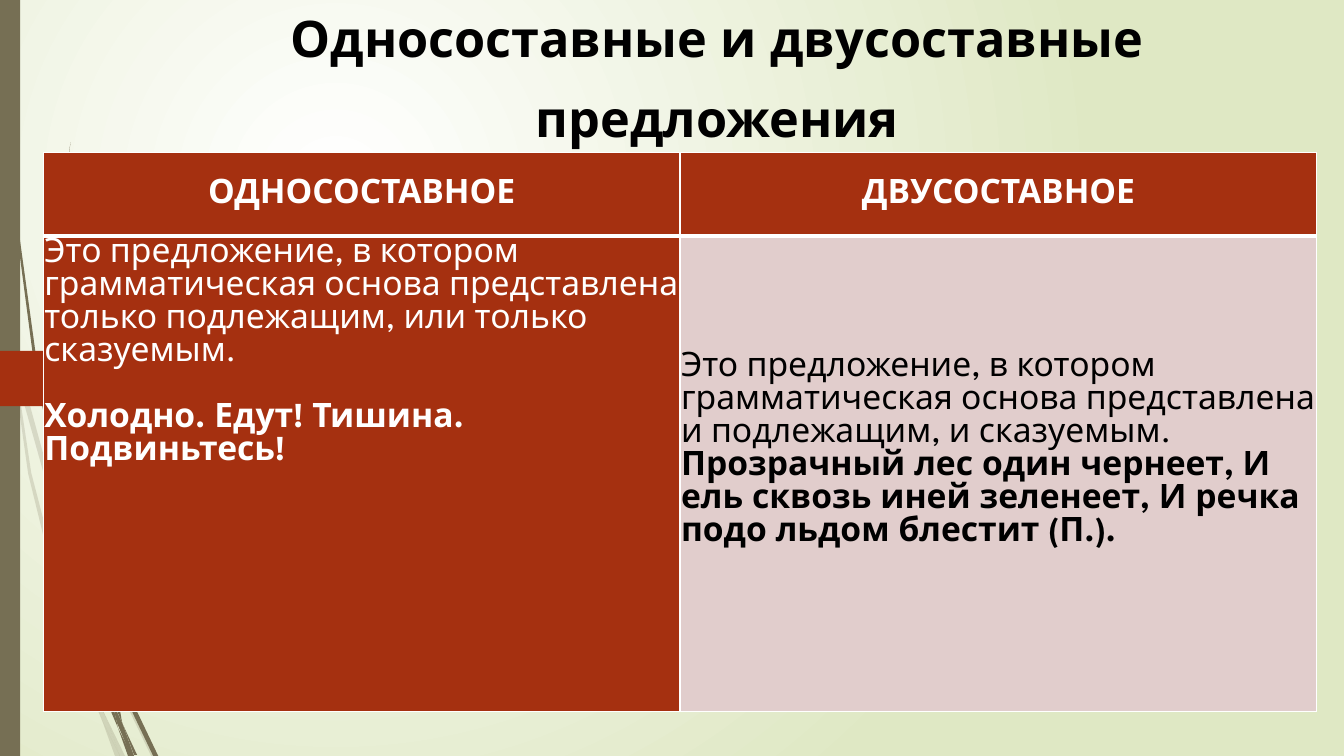
from dataclasses import dataclass

from lxml.etree import SubElement
from pptx import Presentation
from pptx.dml.color import RGBColor
from pptx.enum.shapes import MSO_SHAPE
from pptx.enum.text import MSO_ANCHOR, PP_ALIGN
from pptx.oxml.ns import qn
from pptx.util import Inches, Pt

COLORS = {"white": "FFFFFF", "black": "000000", "meadow": "DFE8C4",
          "stem": "766F54", "brick": "A53010", "blush": "E1CDCC"}
FONT = "League Spartan"
Points = list[tuple[float, float]]


@dataclass
class Line:
    text: str
    bold: bool = False
    before: float = 0


@dataclass
class Entry:
    lines: list[Line]
    fill: str
    color: str
    anchor: MSO_ANCHOR = MSO_ANCHOR.MIDDLE
    align: PP_ALIGN = PP_ALIGN.LEFT
    bottom: float = 0.01


# Grass blades: outlines in inches
PALE_BLADES: list[Points] = [
    [(0.11, 3.5), (0.09, 3.22), (0, 2.82), (0, 2.99), (0.1, 3.44)],
    [(0.58, 5.22), (0.84, 6), (0.85, 5.87), (0.62, 5.2), (0.14, 3.45), (0.17, 3.76)],
    [(0.92, 6.07), (0.88, 5.96), (0.88, 6.1), (1.23, 6.94), (1.5, 7.5), (1.55, 7.5),
     (1.27, 6.92)],
    [(1.19, 7.5), (1.24, 7.5), (1.05, 7.11)],
    [(0.93, 6.83), (0.7, 6.19), (0.31, 4.69), (0.17, 3.76), (0.11, 3.5), (0.28, 4.7),
     (0.65, 6.21), (0.92, 6.93), (1.01, 7.14), (0.99, 7.07)],
    [(0.84, 5.99), (0.87, 6.46), (0.93, 6.83), (0.96, 6.92), (1.05, 7.12), (1.03, 7.07),
     (0.91, 6.46), (0.88, 6.1), (0.88, 6.08)],
    [(0.88, 5.84), (1.1, 4.62), (1.6, 3.49), (2.29, 2.45), (2.68, 1.98), (2.9, 1.75),
     (3.12, 1.54), (3.12, 1.53), (2.89, 1.75), (2.68, 1.97), (2.28, 2.44), (1.58, 3.48),
     (1.07, 4.61), (0.85, 5.84), (0.85, 5.86), (0.88, 5.96)],
    [(1.01, 7.14), (1.14, 7.5), (1.19, 7.5)],
    [(0.88, 6.08), (0.88, 5.96), (0.85, 5.86), (0.84, 5.99)],
    [(0.96, 6.92), (0.93, 6.83), (0.99, 7.07), (1.01, 7.14), (1.19, 7.5), (1.05, 7.11)],
]
DARK_BLADES: list[Points] = [
    [(0.07, 1.1), (0.17, 2.33), (0.33, 3.55), (0.56, 4.77), (0.57, 4.81), (0.55, 4.57),
     (0.55, 4.53), (0.36, 3.55), (0.19, 2.32), (0.08, 1.09), (0.05, 0.48), (0.04, 0),
     (0.03, 0), (0.04, 0.48)],
    [(0.88, 5.92), (1.06, 6.45), (1.06, 6.31), (0.93, 5.9), (0.6, 4.72), (0.64, 5.05)],
    [(1.13, 6.49), (1.1, 6.41), (1.11, 6.56), (1.32, 7.08), (1.52, 7.5), (1.57, 7.5),
     (1.36, 7.06)],
    [(1.1, 6.91), (0.98, 6.57), (0.72, 5.56), (0.64, 5.05), (0.57, 4.77), (0.68, 5.57),
     (0.93, 6.59), (1.11, 7.08), (1.17, 7.22), (1.16, 7.17)],
    [(0.6, 4.72), (0.58, 4.53), (0.54, 3.49), (0.58, 2.45), (0.63, 1.93), (0.7, 1.41),
     (0.62, 1.93), (0.56, 2.45), (0.52, 3.49), (0.55, 4.49)],
    [(1.33, 7.49), (1.36, 7.49), (1.22, 7.19)],
    [(0.57, 4.77), (0.64, 5.05), (0.6, 4.72), (0.55, 4.49), (0.55, 4.53)],
    [(1.11, 6.33), (1.25, 5.52), (1.58, 4.76), (2.05, 4.06), (2.31, 3.74), (2.61, 3.44),
     (2.6, 3.44), (2.31, 3.73), (2.04, 4.05), (1.56, 4.74), (1.22, 5.51), (1.06, 6.31),
     (1.1, 6.41)],
    [(1.17, 7.22), (1.27, 7.5), (1.31, 7.5)],
    [(1.06, 6.45), (1.1, 6.91), (1.22, 7.19), (1.21, 7.16), (1.11, 6.56), (1.09, 6.51)],
    [(1.06, 6.45), (1.11, 6.56), (1.1, 6.41), (1.06, 6.31)],
    [(1.16, 7.06), (1.1, 6.91), (1.16, 7.17), (1.3, 7.5), (1.33, 7.5), (1.22, 7.19)],
]
PAGE_MARKER: Points = [(0, 3.48), (1.47, 3.48), (1.74, 3.76), (1.47, 4.03), (0, 4.03)]

HEADER = {"fill": "brick", "color": "white", "align": PP_ALIGN.CENTER}
ENTRIES = [
    [Entry([Line("ОДНОСОСТАВНОЕ", True)], **HEADER),
     Entry([Line("ДВУСОСТАВНОЕ", True)], **HEADER)],
    [Entry([Line("Это предложение, в котором грамматическая основа представлена "
                 "только подлежащим, или только сказуемым."),
            Line("Холодно. Едут! Тишина. Подвиньтесь!", True, 23.6)],
           "brick", "white", MSO_ANCHOR.TOP),
     Entry([Line("Это предложение, в котором грамматическая основа представлена "
                 "и подлежащим, и сказуемым."),
            Line("Прозрачный лес один чернеет, И ель сквозь иней зеленеет, "
                 "И речка подо льдом блестит (П.).", True)],
           "blush", "black", bottom=0.49)],
]


def rgb(name: str) -> RGBColor:
    return RGBColor.from_string(COLORS[name])


def paint(shape, color: str) -> None:
    shape.shadow.inherit = False
    shape.fill.solid()
    shape.fill.fore_color.rgb = rgb(color)
    shape.line.fill.background()


def draw_outline(page, points: Points, color: str, opacity: int = 100) -> None:
    corners = [(Inches(x), Inches(y)) for x, y in points]
    builder = page.shapes.build_freeform(*corners[0], scale=1.0)
    builder.add_line_segments(corners[1:], close=True)
    shape = builder.convert_to_shape()
    paint(shape, color)
    if opacity < 100:
        tint = shape.element.spPr.find(".//" + qn("a:srgbClr"))
        SubElement(tint, qn("a:alpha"), val=str(opacity * 1000))


def write(para, text: str, size: float, color: str, bold: bool) -> None:
    span = para.add_run()
    span.text = text
    style = {"name": FONT, "size": Pt(size), "bold": bold}
    for key, value in style.items():
        setattr(span.font, key, value)
    span.font.color.rgb = rgb(color)


def border_cell(cell, bottom_width: float) -> None:
    properties = cell._tc.get_or_add_tcPr()
    widths = {"a:lnL": 1, "a:lnR": 1, "a:lnT": 1, "a:lnB": bottom_width}
    for index, (tag, width) in enumerate(widths.items()):
        edge = SubElement(properties, qn(tag), w=str(Pt(width)))
        fill = SubElement(edge, qn("a:solidFill"))
        SubElement(fill, qn("a:srgbClr"), val=COLORS["white"])
        properties.insert(index, edge)


def fill_cell(cell, entry: Entry) -> None:
    layout = {"vertical_anchor": entry.anchor, "margin_bottom": Inches(entry.bottom)}
    layout |= {f"margin_{side}": Inches(0.01) for side in ("left", "right", "top")}
    for key, value in layout.items():
        setattr(cell, key, value)
    cell.fill.solid()
    cell.fill.fore_color.rgb = rgb(entry.fill)
    frame = cell.text_frame
    for index, line in enumerate(entry.lines):
        para = frame.add_paragraph() if index else frame.paragraphs[0]
        spacing = {"alignment": entry.align, "line_spacing": 1.07,
                   "space_before": Pt(line.before)}
        for key, value in spacing.items():
            setattr(para, key, value)
        write(para, line.text, 24, entry.color, line.bold)


def draw_background(page) -> None:
    fill = page.background.fill
    fill.gradient()
    for stop, color in zip(fill.gradient_stops, ("white", "meadow")):
        stop.color.rgb = rgb(color)
    linear = page.element.find(".//" + qn("a:lin"))
    gradient = linear.getparent()
    gradient.remove(linear)
    circle = SubElement(gradient, qn("a:path"), path="circle")
    SubElement(circle, qn("a:fillToRect"), l="50000", t="50000", r="100000", b="100000")


def draw_title(page) -> None:
    box = page.shapes.add_textbox(Inches(2.24), Inches(0.31), Inches(9.75), Inches(1.2))
    frame = box.text_frame
    frame.word_wrap = True
    frame.vertical_anchor = MSO_ANCHOR.BOTTOM
    para = frame.paragraphs[0]
    para.alignment = PP_ALIGN.CENTER
    para.line_spacing = 1.32
    write(para, "Односоставные и двусоставные предложения", 36, "black", True)


def draw_table(page) -> None:
    table = page.shapes.add_table(2, 2, Inches(0.43), Inches(1.51),
                                  Inches(12.63), Inches(5.55)).table
    for row, height in zip(table.rows, (0.83, 4.72)):
        row.height = Inches(height)
    for row_index, entries in enumerate(ENTRIES):
        for column_index, entry in enumerate(entries):
            cell = table.cell(row_index, column_index)
            fill_cell(cell, entry)
            border_cell(cell, 1 if row_index else 3)


def main() -> None:
    deck = Presentation()
    deck.slide_width, deck.slide_height = Inches(13.33), Inches(7.5)
    page = deck.slides.add_slide(deck.slide_layouts[6])
    # Backdrop
    draw_background(page)
    for blade in PALE_BLADES:
        draw_outline(page, blade, "stem", 20)
    for blade in DARK_BLADES:
        draw_outline(page, blade, "stem")
    paint(page.shapes.add_shape(MSO_SHAPE.RECTANGLE, 0, 0, Inches(0.2), Inches(7.5)), "stem")
    draw_outline(page, PAGE_MARKER, "brick")
    # Content
    draw_title(page)
    draw_table(page)
    deck.save("out.pptx")


if __name__ == "__main__":
    main()
